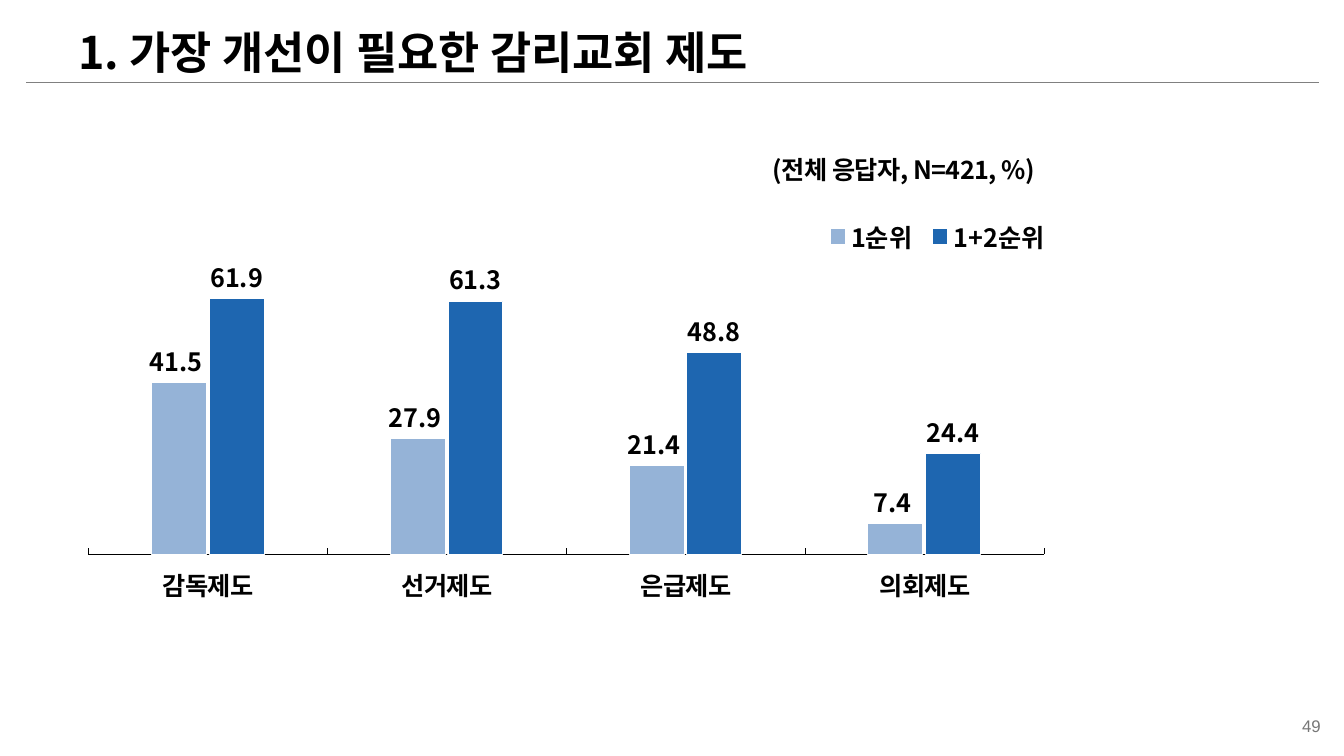
from lxml.etree import SubElement
from pptx import Presentation
from pptx.chart.data import CategoryChartData
from pptx.dml.color import RGBColor
from pptx.enum.chart import (XL_CHART_TYPE, XL_LABEL_POSITION, XL_LEGEND_POSITION,
                             XL_TICK_LABEL_POSITION, XL_TICK_MARK)
from pptx.enum.shapes import MSO_CONNECTOR
from pptx.enum.text import MSO_ANCHOR, PP_ALIGN
from pptx.oxml import parse_xml
from pptx.oxml.ns import nsdecls, qn
from pptx.util import Inches, Pt

COLORS = {"text": "000000", "number": "777777", "rule": "808080",
          "first": "95B3D7", "both": "1E66B0", "gap": "FFFFFF"}
KOREAN = "Noto Sans CJK KR"
SYSTEMS = ["감독제도", "선거제도", "은급제도", "의회제도"]
RANKS = [("1순위", [41.5, 27.9, 21.4, 7.4], "first", "0.0_ "),
         ("1+2순위", [61.9, 61.3, 48.8, 24.4], "both", "#,##0.0")]


def rgb(name):
    return RGBColor.from_string(COLORS[name])


def style_font(font, size=18, color="text", bold=True, face=KOREAN):
    font.size, font.bold, font.name = Pt(size), bold, face
    font.color.rgb = rgb(color)


def write(tf, text, align=PP_ALIGN.LEFT, spacing=None, tracking=None, **font):
    """Put one formatted run in the first paragraph; tracking is in points."""
    p = tf.paragraphs[0]
    p.alignment = align
    if spacing:
        p.line_spacing = spacing
    r = p.add_run()
    r.text = text
    style_font(r.font, **font)
    rPr = r.font._element
    SubElement(rPr, qn("a:ea")).set("typeface", r.font.name)
    if tracking:
        rPr.set("spc", str(round(tracking * 100)))


def place_layout(parent, x, y, w, h, inner=False):
    """Fix a chart part's place as fractions of the chart."""
    target = '<c:layoutTarget val="inner"/>' if inner else ""
    return parse_xml(
        f'<c:layout {nsdecls("c")}><c:manualLayout>{target}'
        '<c:xMode val="edge"/><c:yMode val="edge"/>'
        f'<c:x val="{x}"/><c:y val="{y}"/><c:w val="{w}"/><c:h val="{h}"/>'
        '</c:manualLayout></c:layout>') if parent is None else parent


class Deck:
    def __init__(self):
        self.prs = Presentation()
        self.prs.slide_width, self.prs.slide_height = Inches(13.33), Inches(7.5)
        self.s = self.prs.slides.add_slide(self.prs.slide_layouts[6])

    def text(self, text, x, y, w, h, wrap=False, anchor=MSO_ANCHOR.TOP, **fmt):
        tf = self.s.shapes.add_textbox(Inches(x), Inches(y), Inches(w), Inches(h)).text_frame
        tf.word_wrap = wrap
        tf.vertical_anchor = anchor
        write(tf, text, **fmt)
        return tf

    def rule(self, x1, x2, y):
        line = self.s.shapes.add_connector(MSO_CONNECTOR.STRAIGHT, Inches(x1), Inches(y),
                                           Inches(x2), Inches(y))
        line.line.color.rgb = rgb("rule")
        line.line.width = Pt(1)
        SubElement(line._element.spPr, qn("a:effectLst"))

    def chart(self, x, y, w, h):
        data = CategoryChartData()
        data.categories = [str(i + 1) for i in range(len(SYSTEMS))]
        for name, values, *_ in RANKS:
            data.add_series(name, values)
        chart = self.s.shapes.add_chart(XL_CHART_TYPE.COLUMN_CLUSTERED, Inches(x), Inches(y),
                                        Inches(w), Inches(h), data).chart
        style_font(chart.font, size=9, face="Arial")
        chart.has_title = False
        self.axes(chart)
        self.legend(chart)
        plot = chart.plots[0]
        plot.gap_width, plot.overlap, plot.vary_by_categories = 230, -5, False
        for series, (_, _, color, number_format) in zip(plot.series, RANKS):
            self.series(series, color, number_format)
        area = chart._chartSpace.chart.plotArea
        for old in area.findall(qn("c:layout")):
            area.remove(old)
        area.insert(0, place_layout(None, 0.02, 0.092, 0.962, 0.878, inner=True))

    def axes(self, chart):
        cat, val = chart.category_axis, chart.value_axis
        for axis in (cat, val):
            axis.tick_label_position = XL_TICK_LABEL_POSITION.NONE
            axis.has_major_gridlines = False
            axis.minor_tick_mark = XL_TICK_MARK.NONE
        cat.major_tick_mark = XL_TICK_MARK.INSIDE
        cat.format.line.color.rgb = rgb("text")
        cat.format.line.width = Pt(0.25)
        val.major_tick_mark = XL_TICK_MARK.OUTSIDE
        val.format.line.fill.background()
        val.minimum_scale, val.maximum_scale = 0, 80

    def legend(self, chart):
        chart.has_legend = True
        legend = chart.legend
        legend.position = XL_LEGEND_POSITION.RIGHT
        legend.include_in_layout = False
        style_font(legend.font)
        element = legend._element
        for old in element.findall(qn("c:layout")):
            element.remove(old)
        element.find(qn("c:legendPos")).addnext(place_layout(None, 0.755, 0.06, 0.24, 0.13))

    def series(self, series, color, number_format):
        series.format.fill.solid()
        series.format.fill.fore_color.rgb = rgb(color)
        series.format.line.color.rgb = rgb("gap")
        series.format.line.width = Pt(0.75)
        labels = series.data_labels
        labels.show_value = True
        labels.position = XL_LABEL_POSITION.OUTSIDE_END
        labels.number_format, labels.number_format_is_linked = number_format, False
        style_font(labels.font)

    def table(self, names, x, y, w, h):
        table = self.s.shapes.add_table(1, len(names), Inches(x), Inches(y),
                                        Inches(w), Inches(h)).table
        table.first_row = table.horz_banding = False
        for cell, name in zip(table.rows[0].cells, names):
            cell.margin_left = cell.margin_right = cell.margin_top = Inches(0.01)
            cell.margin_bottom = 0
            cell.vertical_anchor = MSO_ANCHOR.MIDDLE
            write(cell.text_frame, name, align=PP_ALIGN.CENTER, spacing=1.1, tracking=-0.4)
            cell.fill.background()
            for side in ("a:lnB", "a:lnT", "a:lnR", "a:lnL"):
                border = parse_xml(f'<{side} {nsdecls("a")} w="0"><a:noFill/></{side}>')
                cell._tc.tcPr.insert(0, border)


def main():
    deck = Deck()
    number = deck.text("49", 12.45, 7.05, 0.67, 0.3, wrap=True, anchor=MSO_ANCHOR.BOTTOM,
                       align=PP_ALIGN.RIGHT, size=12, color="number", bold=False, face="Arial")
    number.margin_left = number.margin_right = Inches(0.02)
    deck.rule(0.26, 13.08, 0.82)
    deck.chart(0.68, 1.88, 9.85, 3.73)
    deck.table(SYSTEMS, 0.88, 5.54, 9.48, 0.47)
    deck.text("(전체 응답자, N=421, %)", 7.56, 1.48, 3.07, 0.4, tracking=-0.4)
    deck.text("1. 가장 개선이 필요한 감리교회 제도", 0.68, 0.2, 7.65, 0.64, size=32)
    deck.prs.save("out.pptx")


if __name__ == "__main__":
    main()
